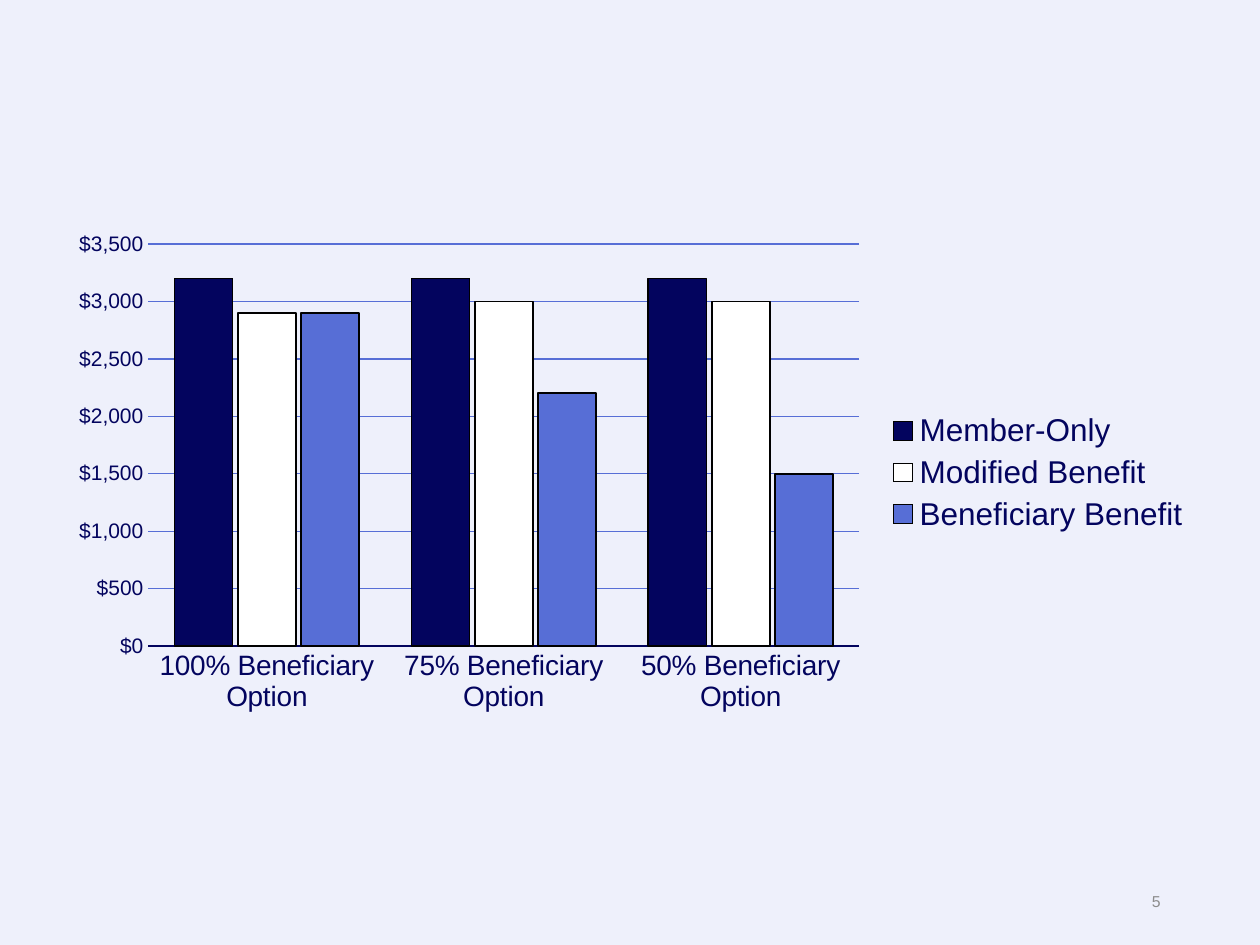
from lxml import etree
from pptx import Presentation
from pptx import util as u
from pptx.chart.data import CategoryChartData
from pptx.dml.color import RGBColor
from pptx.enum import chart as kinds, text
from pptx.oxml.ns import qn

WIDTH, HEIGHT = 10, 7.5
FONT = "Arial"
NAVY, WHITE, BLUE, BLACK, GREY, PALE = "03045E", "FFFFFF", "576ED6", "000000", "8C8C8C", "EEF0FB"
OPTIONS = [f"{share}% Beneficiary Option" for share in (100, 75, 50)]
SERIES = [
    ("Member-Only", NAVY, (3200, 3200, 3200)),
    ("Modified Benefit", WHITE, (2900, 3000, 3000)),
    ("Beneficiary Benefit", BLUE, (2900, 2200, 1500)),
]
PAGE_NUMBER = "5"
CHART_BOX = (0.45, 1.78, 9.1, 3.94)
NUMBER_BOX = (7.06, 6.95, 2.25, 0.4)
PLOT_SHARES = {"x": 0.08, "y": 0.04, "w": 0.62, "h": 0.81}


def color(value):
    return RGBColor.from_string(value)


def assign(target, values):
    for name, value in values.items():
        setattr(target, name, value)


def style_font(font, size, value):
    assign(font, {"name": FONT, "size": u.Pt(size)})
    font.color.rgb = color(value)


def style_line(line, value, width):
    line.color.rgb = color(value)
    line.width = u.Pt(width)


def place_plot(chart):
    area = chart._chartSpace.chart.plotArea
    for old in area.findall(qn("c:layout")):
        area.remove(old)
    layout = etree.Element(qn("c:layout"))
    manual = etree.SubElement(layout, qn("c:manualLayout"))
    settings = {"layoutTarget": "inner", "xMode": "edge", "yMode": "edge", **PLOT_SHARES}
    for name, value in settings.items():
        etree.SubElement(manual, qn(f"c:{name}")).set("val", str(value))
    area.insert(0, layout)


def add_benefit_chart(slide):
    data = CategoryChartData()
    data.categories = OPTIONS
    for name, _, values in SERIES:
        data.add_series(name, values)
    frame = slide.shapes.add_chart(
        kinds.XL_CHART_TYPE.COLUMN_CLUSTERED, *map(u.Inches, CHART_BOX), data)
    chart = frame.chart
    style_font(chart.font, 10, BLACK)
    assign(chart, {"has_title": False, "has_legend": True})
    assign(chart.legend, {"position": kinds.XL_LEGEND_POSITION.RIGHT, "include_in_layout": False})
    style_font(chart.legend.font, 18, NAVY)

    plot = chart.plots[0]
    assign(plot, {"gap_width": 90, "overlap": -9, "vary_by_categories": False})
    for series, (_, fill, _) in zip(plot.series, SERIES):
        series.format.fill.solid()
        series.format.fill.fore_color.rgb = color(fill)
        style_line(series.format.line, BLACK, 1)

    for axis, size in ((chart.category_axis, 16), (chart.value_axis, 12)):
        assign(axis, {"major_tick_mark": kinds.XL_TICK_MARK.NONE,
                      "minor_tick_mark": kinds.XL_TICK_MARK.NONE})
        style_font(axis.tick_labels.font, size, NAVY)
    style_line(chart.category_axis.format.line, NAVY, 1.5)
    values = chart.value_axis
    assign(values, {"minimum_scale": 0, "maximum_scale": 3500, "major_unit": 500})
    assign(values.tick_labels, {"number_format": '"$"#,##0', "number_format_is_linked": False})
    values.format.line.fill.background()
    style_line(values.major_gridlines.format.line, BLUE, 0.75)
    place_plot(chart)


def add_page_number(slide):
    frame = slide.shapes.add_textbox(*map(u.Inches, NUMBER_BOX)).text_frame
    assign(frame, {"word_wrap": True, "vertical_anchor": text.MSO_ANCHOR.MIDDLE})
    paragraph = frame.paragraphs[0]
    assign(paragraph, {"text": PAGE_NUMBER, "alignment": text.PP_ALIGN.RIGHT})
    style_font(paragraph.runs[0].font, 9, GREY)


def main():
    """Build the slide comparing benefits under three beneficiary options."""
    presentation = Presentation()
    assign(presentation, {"slide_width": u.Inches(WIDTH), "slide_height": u.Inches(HEIGHT)})
    slide = presentation.slides.add_slide(presentation.slide_layouts[6])
    slide.background.fill.solid()
    slide.background.fill.fore_color.rgb = color(PALE)
    add_benefit_chart(slide)
    add_page_number(slide)
    presentation.save("out.pptx")


if __name__ == "__main__":
    main()
